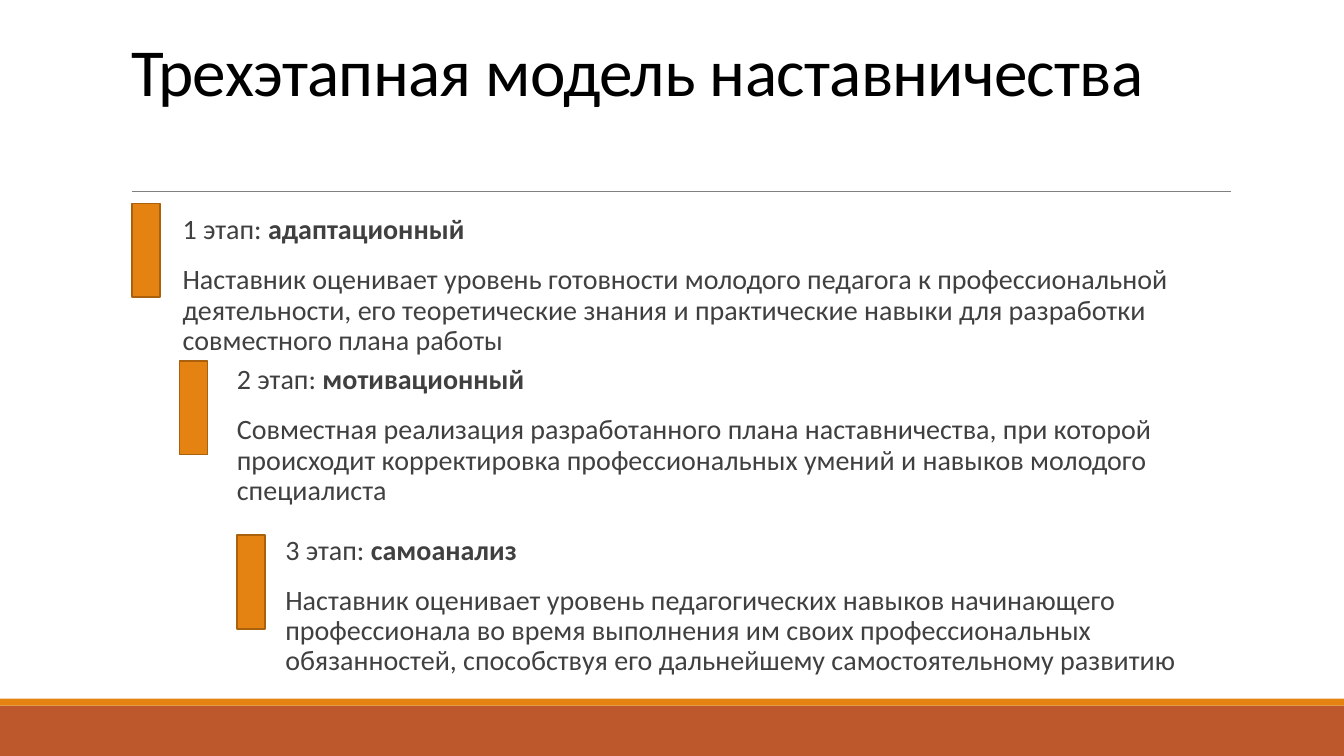
from pptx import Presentation, util as u
from pptx.dml.color import RGBColor
from pptx.enum import shapes, text
from pptx.oxml.ns import qn

W, H = u.Inches(13.33), u.Inches(7.5)
FONT = "Calibri"
ORANGE, RUST, EDGE = "E48312", "BD582C", "A9610D"
GREY, DARK, BLACK = "808080", "404040", "000000"

# Per stage: bar (left, top), text box (left, top, width, height), name, description.
# Lengths are percentages of the slide's width and height.
STAGES = [
    ((9.83, 26.93), (12.83, 27.87, 74.79, 19.87), "адаптационный",
     "Наставник оценивает уровень готовности молодого педагога к профессиональной "
     "деятельности, его теоретические знания и практические навыки для разработки "
     "совместного плана работы"),
    ((13.35, 47.73), (16.88, 47.73, 74.64, 22.93), "мотивационный",
     "Совместная реализация разработанного плана наставничества, при которой "
     "происходит корректировка профессиональных умений и навыков молодого специалиста"),
    ((17.63, 70.8), (20.48, 70.27, 73.82, 21.07), "самоанализ",
     "Наставник оценивает уровень педагогических навыков начинающего профессионала "
     "во время выполнения им своих профессиональных обязанностей, способствуя его "
     "дальнейшему самостоятельному развитию"),
]
BAR_SIZE = (2.1, 12.4)


def rgb(value):
    return RGBColor.from_string(value)


def px(share):
    return int(W * share / 100)


def py(share):
    return int(H * share / 100)


def frame(x, y, w, h):
    return px(x), py(y), px(w), py(h)


def place(sp, box):
    sp.left, sp.top, sp.width, sp.height = frame(*box)


def add_rect(s, box, fill, edge=None):
    sp = s.shapes.add_shape(shapes.MSO_SHAPE.RECTANGLE, *frame(*box))
    sp.shadow.inherit = False
    sp.fill.solid()
    sp.fill.fore_color.rgb = rgb(fill)
    if edge:
        sp.line.color.rgb = rgb(edge)
        sp.line.width = u.Pt(1.25)
    else:
        sp.line.fill.background()


def add_rule(s, x1, x2, y):
    line = s.shapes.add_connector(shapes.MSO_CONNECTOR.STRAIGHT,
                                  px(x1), py(y), px(x2), py(y))
    line.line.color.rgb = rgb(GREY)
    line.line.width = u.Pt(0.5)
    sp_pr = line._element.spPr
    sp_pr.append(sp_pr.makeelement(qn("a:effectLst"), {}))


def add_run(p, words, size, color, bold=False):
    r = p.add_run()
    r.text = words
    r.font.name = FONT
    r.font.size = u.Pt(size)
    r.font.bold = bold
    r.font.color.rgb = rgb(color)
    return r


def format_paragraph(p):
    p.alignment = text.PP_ALIGN.LEFT
    p.line_spacing = 0.9
    p.space_before, p.space_after = u.Pt(12), u.Pt(2)
    p_pr = p._p.get_or_add_pPr()
    p_pr.set("marL", str(u.Inches(0.1)))
    p_pr.set("indent", "0")
    p_pr.append(p_pr.makeelement(qn("a:buNone"), {}))


def fill_title(sp):
    place(sp, (9, 4.13, 82.5, 21.2))
    tf = sp.text_frame
    tf.auto_size = text.MSO_AUTO_SIZE.NONE
    tf.vertical_anchor = text.MSO_ANCHOR.TOP
    tf.margin_top = u.Inches(0.1)
    p = tf.paragraphs[0]
    p.alignment = text.PP_ALIGN.LEFT
    p.line_spacing = 0.85
    r = add_run(p, "Трехэтапная модель наставничества", 48, BLACK)
    r._r.get_or_add_rPr().set("spc", "-50")


def fill_stage(sp, number, name, description):
    tf = sp.text_frame
    tf.word_wrap = True
    tf.auto_size = text.MSO_AUTO_SIZE.NONE
    tf.vertical_anchor = text.MSO_ANCHOR.TOP
    tf.margin_left = tf.margin_right = 0
    tf.margin_top = tf.margin_bottom = u.Inches(0.05)
    heading, body = tf.paragraphs[0], tf.add_paragraph()
    for p in (heading, body):
        format_paragraph(p)
    add_run(heading, f"{number} этап: ", 20, DARK)
    add_run(heading, name, 20, DARK, bold=True)
    add_run(body, description, 20, DARK)


def main():
    prs = Presentation()
    prs.slide_width, prs.slide_height = W, H
    s = prs.slides.add_slide(prs.slide_layouts[1])

    # Footer bands and rule under the title
    add_rect(s, (0, 93.33, 100, 6.67), RUST)
    add_rect(s, (0, 92.4, 100, 0.93), ORANGE)
    add_rule(s, 9.83, 91.6, 25.33)

    # Title
    fill_title(s.shapes.title)

    # Stages: the first uses the body placeholder
    for number, (bar, box, name, description) in enumerate(STAGES, 1):
        add_rect(s, bar + BAR_SIZE, ORANGE, EDGE)
        if number == 1:
            sp = s.placeholders[1]
            place(sp, box)
        else:
            sp = s.shapes.add_textbox(*frame(*box))
        fill_stage(sp, number, name, description)

    prs.save("out.pptx")


if __name__ == "__main__":
    main()
